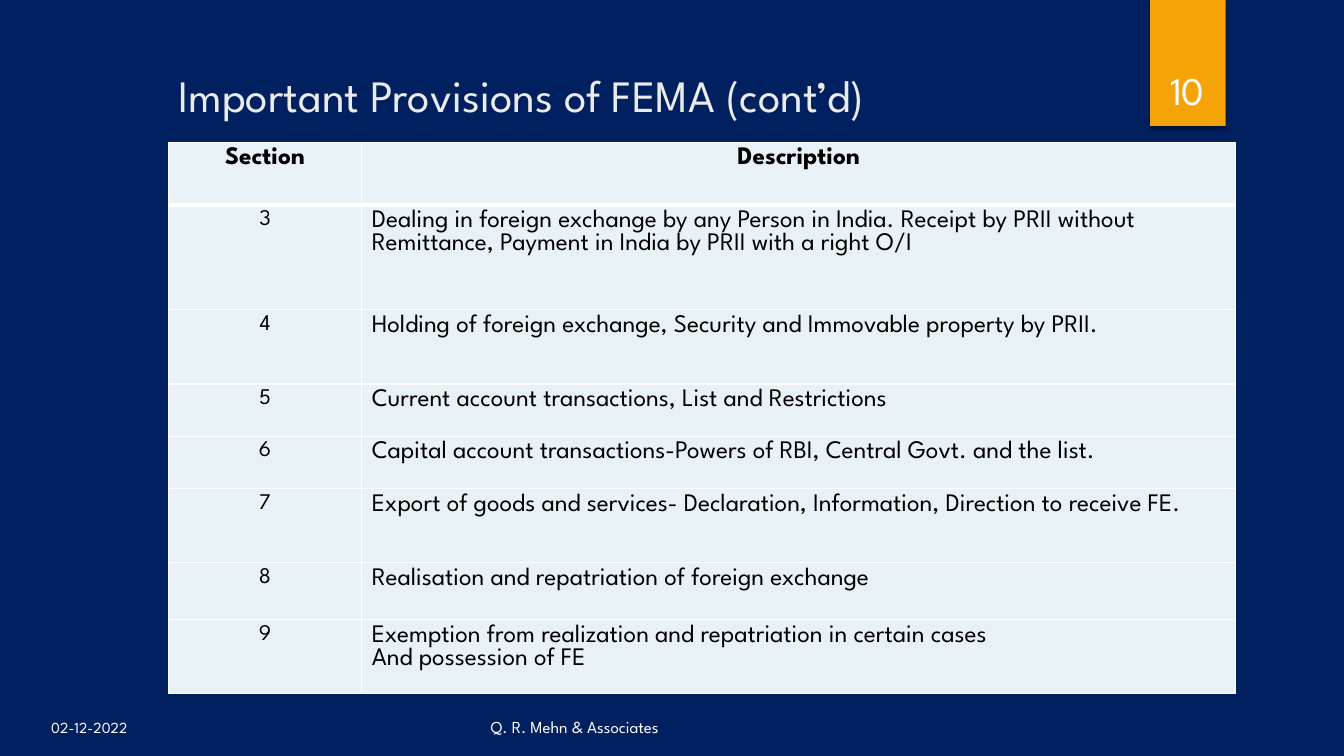
from dataclasses import dataclass

from pptx import Presentation
from pptx.dml.color import RGBColor
from pptx.enum.shapes import MSO_SHAPE
from pptx.enum.text import MSO_ANCHOR, PP_ALIGN
from pptx.oxml import parse_xml
from pptx.oxml.ns import nsdecls, qn
from pptx.util import Pt


@dataclass(frozen=True)
class Theme:
    font: str = "League Spartan"
    back: str = "002060"
    gold: str = "F5A408"
    glow: str = "FAC96A"
    cell: str = "E8F1F6"
    white: str = "FFFFFF"
    black: str = "000000"
    pale: str = "EBEBEB"
    title: int = 32
    number: int = 28
    body: int = 18
    section: int = 16
    footer: int = 12
    date: int = 11


THEME = Theme()


def write(frame, text, size, color, align=PP_ALIGN.LEFT, bold=False):
    """Fill a text frame, one paragraph per line of text."""
    frame.word_wrap = True
    frame.text = text
    for para in frame.paragraphs:
        para.alignment = align
        for run in para.runs:
            font = run.font
            font.name = THEME.font
            font.size = Pt(size)
            font.bold = bold
            font.color.rgb = RGBColor.from_string(color)


class Page:
    def __init__(self, deck, theme):
        self.theme = theme
        self.slide = deck.slides.add_slide(deck.slide_layouts[6])
        fill = self.slide.background.fill
        fill.solid()
        fill.fore_color.rgb = RGBColor.from_string(theme.back)

    def shape(self, kind, box, color):
        item = self.slide.shapes.add_shape(kind, *map(Pt, box))
        item.shadow.inherit = False
        item.fill.solid()
        item.fill.fore_color.rgb = RGBColor.from_string(color)
        item.line.fill.background()
        return item

    def glow(self, box, stops):
        item = self.shape(MSO_SHAPE.OVAL, box, self.theme.glow)
        marks = "".join(
            f'<a:gs pos="{pos * 1000}"><a:srgbClr val="{self.theme.glow}">'
            f'<a:alpha val="{alpha * 1000}"/></a:srgbClr></a:gs>'
            for pos, alpha in stops)
        grad = parse_xml(
            f'<a:gradFill {nsdecls("a")}><a:gsLst>{marks}</a:gsLst>'
            '<a:path path="circle"><a:fillToRect l="50000" t="50000" '
            'r="50000" b="50000"/></a:path></a:gradFill>')
        props = item.element.spPr
        props.replace(props.find(qn("a:solidFill")), grad)

    def tab(self, box):
        item = self.shape(MSO_SHAPE.RECTANGLE, box, self.theme.gold)
        item.element.spPr.find(qn("a:effectLst")).append(parse_xml(
            f'<a:outerShdw {nsdecls("a")} blurRad="{Pt(3)}" '
            f'dist="{Pt(2)}" dir="5400000" rotWithShape="0">'
            f'<a:srgbClr val="{self.theme.black}"><a:alpha val="45000"/>'
            '</a:srgbClr></a:outerShdw>'))

    def text(self, box, text, size, color, anchor=MSO_ANCHOR.BOTTOM,
             **style):
        frame = self.slide.shapes.add_textbox(*map(Pt, box)).text_frame
        frame.vertical_anchor = anchor
        write(frame, text, size, color, **style)

    def border(self, cell, top, bottom):
        props = cell._tc.get_or_add_tcPr()
        widths = {"L": 1, "R": 1, "T": top, "B": bottom}
        for spot, (side, width) in enumerate(widths.items()):
            props.insert(spot, parse_xml(
                f'<a:ln{side} {nsdecls("a")} w="{Pt(width)}"><a:solidFill>'
                f'<a:srgbClr val="{self.theme.white}"/></a:solidFill>'
                f'</a:ln{side}>'))

    def table(self, left, top, widths, heights, rows):
        theme = self.theme
        grid = self.slide.shapes.add_table(
            len(rows), len(widths), Pt(left), Pt(top),
            Pt(sum(widths)), Pt(sum(heights))).table
        grid.first_row = grid.horz_banding = False
        for col, width in zip(grid.columns, widths):
            col.width = Pt(width)
        for row, height in zip(grid.rows, heights):
            row.height = Pt(height)
        for i, row in enumerate(rows):
            for j, text in enumerate(row):
                cell = grid.cell(i, j)
                cell.fill.solid()
                cell.fill.fore_color.rgb = RGBColor.from_string(theme.cell)
                self.border(cell, 3 if i == 1 else 1, 3 if i == 0 else 1)
                head = i == 0
                mid = head or j == 0
                write(cell.text_frame, text,
                      theme.body if head or j else theme.section,
                      theme.black, bold=head,
                      align=PP_ALIGN.CENTER if mid else PP_ALIGN.LEFT)


ROWS = [
    ("Section", "Description"),
    ("3", "Dealing in foreign exchange by any Person in India. Receipt by "
          "PRII without Remittance, Payment in India by PRII with a right "
          "O/I"),
    ("4", "Holding of foreign exchange, Security and Immovable property by "
          "PRII."),
    ("5", "Current account transactions, List and Restrictions"),
    ("6", "Capital account transactions-Powers of RBI, Central Govt. and "
          "the list."),
    ("7", "Export of goods and services- Declaration, Information, "
          "Direction to receive FE."),
    ("8", "Realisation and repatriation of foreign exchange"),
    ("9", "Exemption from realization and repatriation in certain cases\n"
          "And possession of FE"),
]


def main():
    deck = Presentation()
    deck.slide_width, deck.slide_height = Pt(960), Pt(540)
    page = Page(deck, THEME)

    # Backdrop
    page.glow((677.5, 131.8, 221.8, 221.8), [(0, 7), (36, 6), (69, 0)])
    page.tab((821.5, 0, 54, 90))

    # Footer and slide number
    page.text((29.5, 507.6, 77.8, 23.8), "02-12-2022", THEME.date,
              THEME.white, anchor=MSO_ANCHOR.MIDDLE)
    page.text((343.4, 506.2, 303.8, 23.8), "Q. R. Mehn & Associates",
              THEME.footer, THEME.white)
    page.text((815, 48.2, 66.2, 36), "10", THEME.number, THEME.white,
              align=PP_ALIGN.CENTER)

    # Provisions table
    page.table(120.2, 101.5, (138.2, 624.2),
               (44.9, 74.9, 53, 37.4, 37.4, 53, 40.5, 53), ROWS)

    # Title
    page.text((120.2, 10.8, 661.7, 79.2),
              "Important Provisions of FEMA (cont’d)", THEME.title,
              THEME.pale)

    deck.save("out.pptx")


if __name__ == "__main__":
    main()
